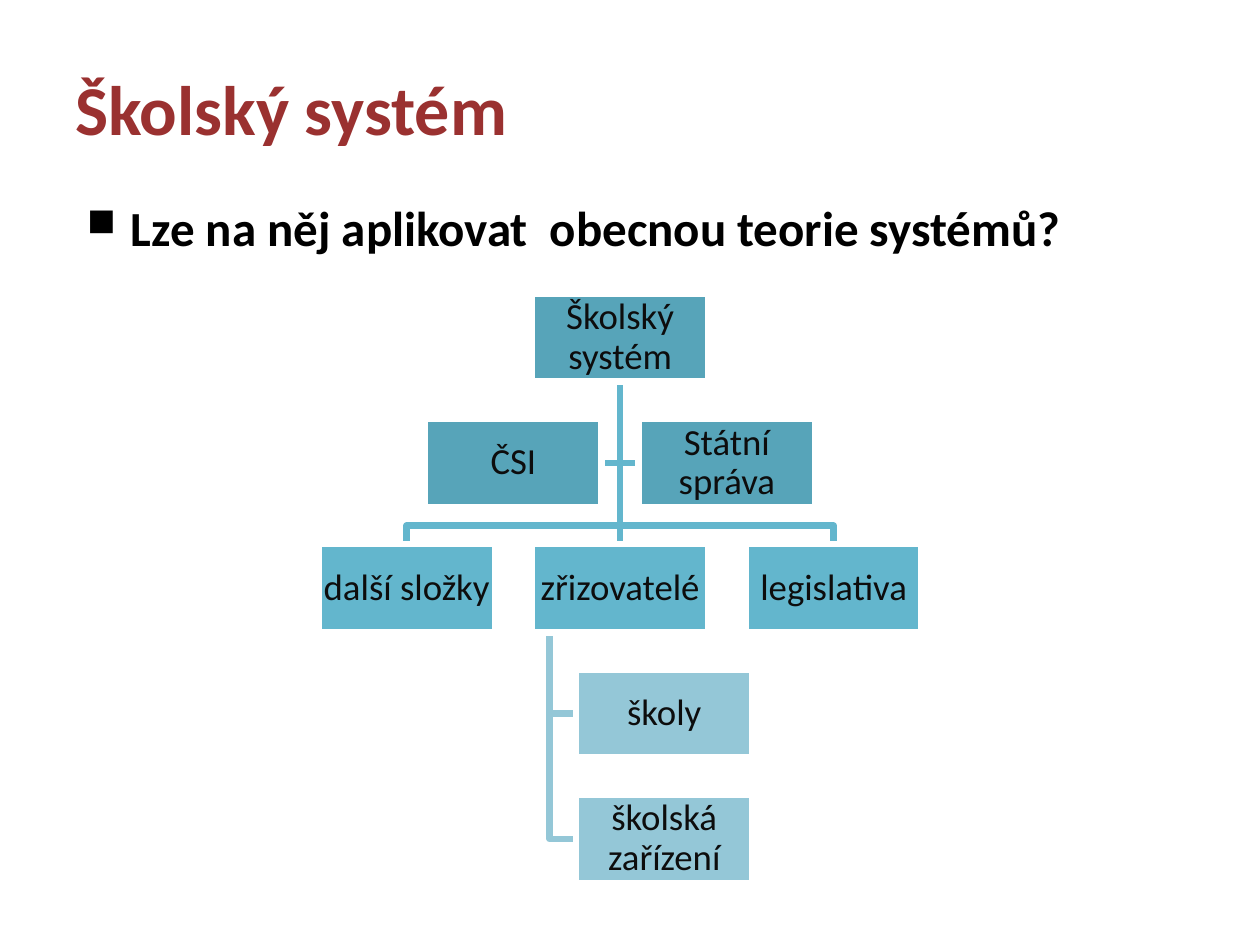
from lxml.etree import SubElement
from pptx import Presentation
from pptx.dml.color import RGBColor
from pptx.enum.shapes import MSO_CONNECTOR, MSO_SHAPE
from pptx.enum.text import MSO_ANCHOR, PP_ALIGN
from pptx.oxml.ns import qn
from pptx.util import Pt

COLORS = {
    "title": "9A3130",
    "body": "000000",
    "label": "0D0D0D",
    "outline": "FFFFFF",
    "top": "57A4B9",
    "middle": "63B6CD",
    "bottom": "94C7D7",
}
FONT = "Calibri"
LINE_WIDTH = 3.78
BOX_WIDTH, BOX_HEIGHT = 100.8, 50.4
CENTER, COLUMN_STEP = 354.4, 122
FIRST_ROW, ROW_STEP = 167.8, 71.6
HALF_GAP = (ROW_STEP - BOX_HEIGHT) / 2
HALF_COLUMN_GAP = (COLUMN_STEP - BOX_WIDTH) / 2
CHILD_SHIFT = BOX_WIDTH / 4

# label, horizontal centre, row, colour
BOXES = [
    ("Školský systém", CENTER, 0, "top"),
    ("ČSI", CENTER - COLUMN_STEP / 2, 1, "top"),
    ("Státní správa", CENTER + COLUMN_STEP / 2, 1, "top"),
    ("další složky", CENTER - COLUMN_STEP, 2, "middle"),
    ("zřizovatelé", CENTER, 2, "middle"),
    ("legislativa", CENTER + COLUMN_STEP, 2, "middle"),
    ("školy", CENTER + CHILD_SHIFT, 3, "bottom"),
    ("školská zařízení", CENTER + CHILD_SHIFT, 4, "bottom"),
]


def rgb(name):
    return RGBColor.from_string(COLORS[name])


def row_top(row):
    return FIRST_ROW + row * ROW_STEP


def row_middle(row):
    return row_top(row) + BOX_HEIGHT / 2


def set_margins(frame, left, top, right, bottom):
    frame.margin_left, frame.margin_top = Pt(left), Pt(top)
    frame.margin_right, frame.margin_bottom = Pt(right), Pt(bottom)


def format_text(para, size, color, bold=False):
    for span in para.runs:
        span.font.name = FONT
        span.font.size = Pt(size)
        span.font.bold = bold
        span.font.color.rgb = rgb(color)


def add_text(page, text, top, height, margins, size, color):
    """Add a bold full-width text box and return it."""
    box = page.shapes.add_textbox(Pt(36), Pt(top), Pt(648), Pt(height))
    frame = box.text_frame
    frame.word_wrap = True
    set_margins(frame, *margins)
    frame.text = text
    format_text(frame.paragraphs[0], size, color, bold=True)
    return box


def add_bullet(para, indent, hanging):
    properties = para._p.get_or_add_pPr()
    properties.set("marL", str(Pt(indent)))
    properties.set("indent", str(-Pt(hanging)))
    SubElement(properties, qn("a:buSzPct"), val="80000")
    SubElement(properties, qn("a:buChar"), char="■")


def add_branch(page, points, color):
    """Draw an open angled line through the points."""
    corners = [(Pt(x), Pt(y)) for x, y in points]
    builder = page.shapes.build_freeform(*corners[0])
    builder.add_line_segments(corners[1:], close=False)
    branch = builder.convert_to_shape()
    branch.shadow.inherit = False
    branch.fill.background()
    branch.line.color.rgb = rgb(color)
    branch.line.width = Pt(LINE_WIDTH)


def add_trunk(page, x, top, bottom, color):
    trunk = page.shapes.add_connector(
        MSO_CONNECTOR.STRAIGHT, Pt(x), Pt(top), Pt(x), Pt(bottom))
    SubElement(trunk._element.spPr, qn("a:effectLst"))
    trunk.line.color.rgb = rgb(color)
    trunk.line.width = Pt(LINE_WIDTH)


def add_box(page, label, center, row, color):
    box = page.shapes.add_shape(
        MSO_SHAPE.RECTANGLE, Pt(center - BOX_WIDTH / 2), Pt(row_top(row)),
        Pt(BOX_WIDTH), Pt(BOX_HEIGHT))
    box.shadow.inherit = False
    box.fill.solid()
    box.fill.fore_color.rgb = rgb(color)
    box.line.color.rgb = rgb("outline")
    box.line.width = Pt(LINE_WIDTH)
    frame = box.text_frame
    frame.word_wrap = True
    frame.vertical_anchor = MSO_ANCHOR.MIDDLE
    set_margins(frame, 0.95, 0.95, 0.95, 0.95)
    frame.text = label
    para = frame.paragraphs[0]
    para.alignment = PP_ALIGN.CENTER
    para.line_spacing = 0.9
    format_text(para, 21, "label")


def add_branches(page):
    root_bottom = row_top(0) + BOX_HEIGHT
    parents_top = row_top(2)
    bus = parents_top - HALF_GAP
    for side in (1, -1):
        column = CENTER + side * COLUMN_STEP
        add_branch(page, [(CENTER, root_bottom), (CENTER, row_middle(1)),
                          (CENTER + side * HALF_COLUMN_GAP, row_middle(1))], "middle")
        add_branch(page, [(CENTER, root_bottom), (CENTER, bus),
                          (column, bus), (column, parents_top)], "middle")
    add_trunk(page, CENTER, root_bottom, parents_top, "middle")

    parent_left = CENTER - BOX_WIDTH / 2
    stem = parent_left + BOX_WIDTH / 10
    for row in (4, 3):
        add_branch(page, [(stem, parents_top + BOX_HEIGHT), (stem, row_middle(row)),
                          (parent_left + CHILD_SHIFT, row_middle(row))], "bottom")


def main():
    deck = Presentation()
    deck.slide_width, deck.slide_height = Pt(720), Pt(540)
    page = deck.slides.add_slide(deck.slide_layouts[6])

    title = add_text(page, "Školský systém", 12.24, 98.64,
                     (7.2, 3.6, 3.6, 3.6), 40, "title")
    title.text_frame.vertical_anchor = MSO_ANCHOR.MIDDLE
    question = add_text(page, "Lze na něj aplikovat  obecnou teorie systémů?",
                        105.84, 56.88, (4.32, 7.2, 7.2, 3.6), 28, "body")
    add_bullet(question.text_frame.paragraphs[0], 34.56, 25.2)

    add_branches(page)
    for box in BOXES:
        add_box(page, *box)
    deck.save("out.pptx")


if __name__ == "__main__":
    main()
